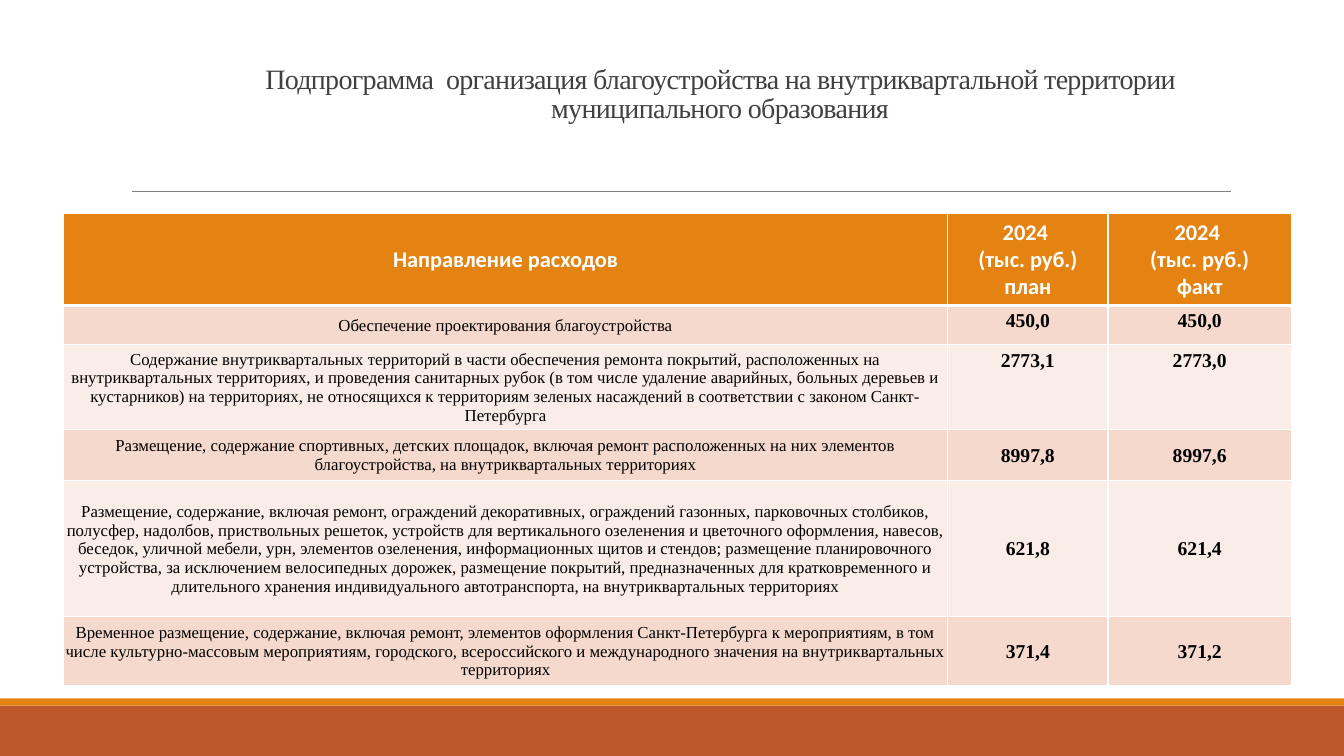
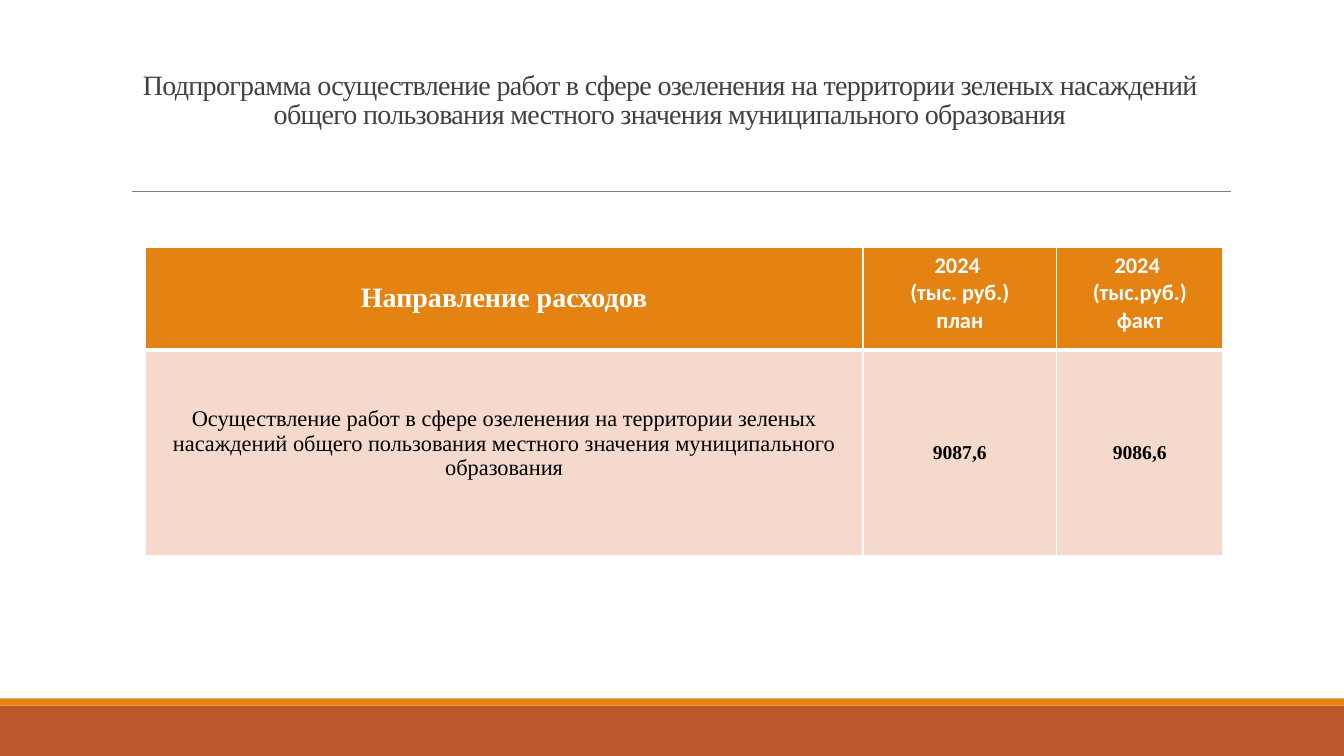
from dataclasses import dataclass, replace

import pptx
import pptx.dml.color
import pptx.enum.shapes
import pptx.enum.text
import pptx.oxml
import pptx.oxml.ns
import pptx.util

Inches = pptx.util.Inches
Pt = pptx.util.Pt
ANCHOR = pptx.enum.text.MSO_ANCHOR
CENTER = pptx.enum.text.PP_ALIGN.CENTER


class Theme:
    width, height = 13.33, 7.5
    serif, sans = "Times New Roman", "Calibri"
    white, black = "FFFFFF", "000000"
    title, rule = "404040", "808080"
    band, accent = "BD582C", "E48312"
    rows = ("F5D9CC", "FAEDE7")
    title_size, head_size, text_size, value_size = 20, 16, 12, 14
    thin, thick = 1, 3


@dataclass
class CellStyle:
    size: float
    font: str = Theme.serif
    color: str = Theme.black
    bold: bool = False
    anchor: ANCHOR = ANCHOR.MIDDLE
    margins: tuple = (0.01, 0.01, 0.01, 0)


ROOMY = (0.1, 0.05, 0.1, 0.05)
HEAD = CellStyle(Theme.head_size, Theme.sans, Theme.white, True, margins=ROOMY)
HEAD_YEAR = replace(HEAD, anchor=ANCHOR.TOP)
HEAD_SERIF = replace(HEAD, font=Theme.serif, size=20)
TEXT = CellStyle(Theme.text_size)
TEXT_LARGE = CellStyle(16, anchor=ANCHOR.TOP, margins=(0.1, 0.56, 0.1, 0.05))
VALUE = CellStyle(Theme.value_size, bold=True)
VALUE_TOP = replace(VALUE, anchor=ANCHOR.TOP, margins=ROOMY)


def rgb(color):
    return pptx.dml.color.RGBColor.from_string(color)


def add_run(p, text, font, size, color, bold=False):
    r = p.add_run()
    r.text = text
    r.font.name, r.font.size, r.font.bold = font, Pt(size), bold
    r.font.color.rgb = rgb(color)
    return r


def add_bar(s, top, height, color):
    bar = s.shapes.add_shape(pptx.enum.shapes.MSO_SHAPE.RECTANGLE, 0, Inches(top),
                             Inches(Theme.width), Inches(height))
    bar.shadow.inherit = False
    bar.fill.solid()
    bar.fill.fore_color.rgb = rgb(color)
    bar.line.fill.background()


def add_frame(s):
    """Footer bands and the rule under the title."""
    add_bar(s, 7, 0.5, Theme.band)
    add_bar(s, 6.93, 0.07, Theme.accent)
    rule = s.shapes.add_connector(pptx.enum.shapes.MSO_CONNECTOR.STRAIGHT,
                                  Inches(1.31), Inches(1.9), Inches(12.21), Inches(1.9))
    rule.line.color.rgb = rgb(Theme.rule)
    rule.line.width = Pt(0.5)
    pptx.oxml.ns.qn("a:effectLst")
    rule._element.spPr.append(pptx.oxml.parse_xml(
        f'<a:effectLst {pptx.oxml.ns.nsdecls("a")}/>'))


def add_title(s, text, box):
    sp = s.shapes.add_textbox(*map(Inches, box))
    tf = sp.text_frame
    tf.word_wrap = True
    tf.vertical_anchor = ANCHOR.BOTTOM
    p = tf.paragraphs[0]
    p.alignment, p.line_spacing = CENTER, 0.85
    r = add_run(p, text, Theme.serif, Theme.title_size, Theme.title)
    r.font._element.set("spc", "-50")


def set_borders(cell, top, bottom):
    sides = {"L": Theme.thin, "R": Theme.thin, "T": top, "B": bottom}
    for side, width in sides.items():
        cell._tc.get_or_add_tcPr().append(pptx.oxml.parse_xml(
            f'<a:ln{side} {pptx.oxml.ns.nsdecls("a")} w="{Pt(width)}"><a:solidFill>'
            f'<a:srgbClr val="{Theme.white}"/></a:solidFill></a:ln{side}>'))


def fill_cell(cell, text, style, fill):
    """Write each line of text as its own centred paragraph."""
    cell.fill.solid()
    cell.fill.fore_color.rgb = rgb(fill)
    cell.vertical_anchor = style.anchor
    (cell.margin_left, cell.margin_top,
     cell.margin_right, cell.margin_bottom) = map(Inches, style.margins)
    tf = cell.text_frame
    for i, line in enumerate(text.split("\n")):
        p = tf.add_paragraph() if i else tf.paragraphs[0]
        p.alignment = CENTER
        add_run(p, line, style.font, style.size, style.color, style.bold)


def add_cost_table(s, left, top, widths, heights, rows, styles):
    """Place a table whose first row is the header; styles holds one tuple per row."""
    table = s.shapes.add_table(len(rows), len(widths), Inches(left), Inches(top),
                               Inches(sum(widths)), Inches(sum(heights))).table
    table.horz_banding = False
    for column, width in zip(table.columns, widths):
        column.width = Inches(width)
    for i, (height, texts, row_styles) in enumerate(zip(heights, rows, styles)):
        table.rows[i].height = Inches(height)
        fill = Theme.rows[(i - 1) % 2] if i else Theme.accent
        for j, (text, style) in enumerate(zip(texts, row_styles)):
            cell = table.cell(i, j)
            set_borders(cell, Theme.thick if i == 1 else Theme.thin,
                        Theme.thick if i == 0 else Theme.thin)
            fill_cell(cell, text, style, fill)


def add_cost_slide(prs, title, title_box, **table):
    s = prs.slides.add_slide(prs.slide_layouts[6])
    add_frame(s)
    add_title(s, title, title_box)
    add_cost_table(s, **table)


IMPROVEMENT_ROWS = [
    ("Направление расходов", "2024 \n(тыс. руб.)\nплан", "2024 \n(тыс. руб.)\nфакт"),
    ("Обеспечение проектирования благоустройства", "450,0", "450,0"),
    ("Содержание внутриквартальных территорий в части обеспечения ремонта покрытий, "
     "расположенных на внутриквартальных территориях, и проведения санитарных рубок "
     "(в том числе удаление аварийных, больных деревьев и кустарников) на территориях, "
     "не относящихся к территориям зеленых насаждений в соответствии с законом "
     "Санкт-Петербурга", "2773,1", "2773,0"),
    ("Размещение, содержание спортивных, детских площадок, включая ремонт расположенных "
     "на них элементов благоустройства, на внутриквартальных территориях",
     "8997,8", "8997,6"),
    ("Размещение, содержание, включая ремонт, ограждений декоративных, ограждений "
     "газонных, парковочных столбиков, полусфер, надолбов, приствольных решеток, "
     "устройств для вертикального озеленения и цветочного оформления, навесов, беседок, "
     "уличной мебели, урн, элементов озеленения, информационных щитов и стендов; "
     "размещение планировочного устройства, за исключением велосипедных дорожек, "
     "размещение покрытий, предназначенных для кратковременного и длительного хранения "
     "индивидуального автотранспорта, на внутриквартальных территориях",
     "621,8", "621,4"),
    ("Временное размещение, содержание, включая ремонт, элементов оформления "
     "Санкт-Петербурга к мероприятиям, в том числе культурно-массовым мероприятиям, "
     "городского, всероссийского и международного значения на внутриквартальных "
     "территориях", "371,4", "371,2"),
]

GREENING_ROWS = [
    ("Направление расходов", "2024 \n(тыс. руб.)\nплан", "2024 \n(тыс.руб.)\nфакт"),
    ("Осуществление работ в сфере озеленения на территории зеленых насаждений общего "
     "пользования местного значения муниципального образования", "9087,6", "9086,6"),
]


def main():
    prs = pptx.Presentation()
    prs.slide_width, prs.slide_height = Inches(Theme.width), Inches(Theme.height)
    add_cost_slide(
        prs,
        "Подпрограмма  организация благоустройства на внутриквартальной территории "
        "муниципального образования",
        (1.94, 0.52, 10.4, 0.76),
        left=0.63, top=2.12, widths=(8.77, 1.59, 1.82),
        heights=(0.91, 0.39, 0.84, 0.51, 1.35, 0.68),
        rows=IMPROVEMENT_ROWS,
        styles=[(HEAD, HEAD_YEAR, HEAD_YEAR)] + [(TEXT, VALUE_TOP, VALUE_TOP)] * 2
        + [(TEXT, VALUE, VALUE)] * 3)
    add_cost_slide(
        prs,
        "Подпрограмма осуществление работ в сфере озеленения на территории зеленых "
        "насаждений общего пользования местного значения муниципального образования",
        (1.14, 0.58, 11, 0.76),
        left=1.44, top=2.45, widths=(7.12, 1.92, 1.65), heights=(1.02, 2.04),
        rows=GREENING_ROWS,
        styles=[(HEAD_SERIF, HEAD_YEAR, HEAD_YEAR), (TEXT_LARGE, VALUE, VALUE)])
    prs.save("out.pptx")


if __name__ == "__main__":
    main()
